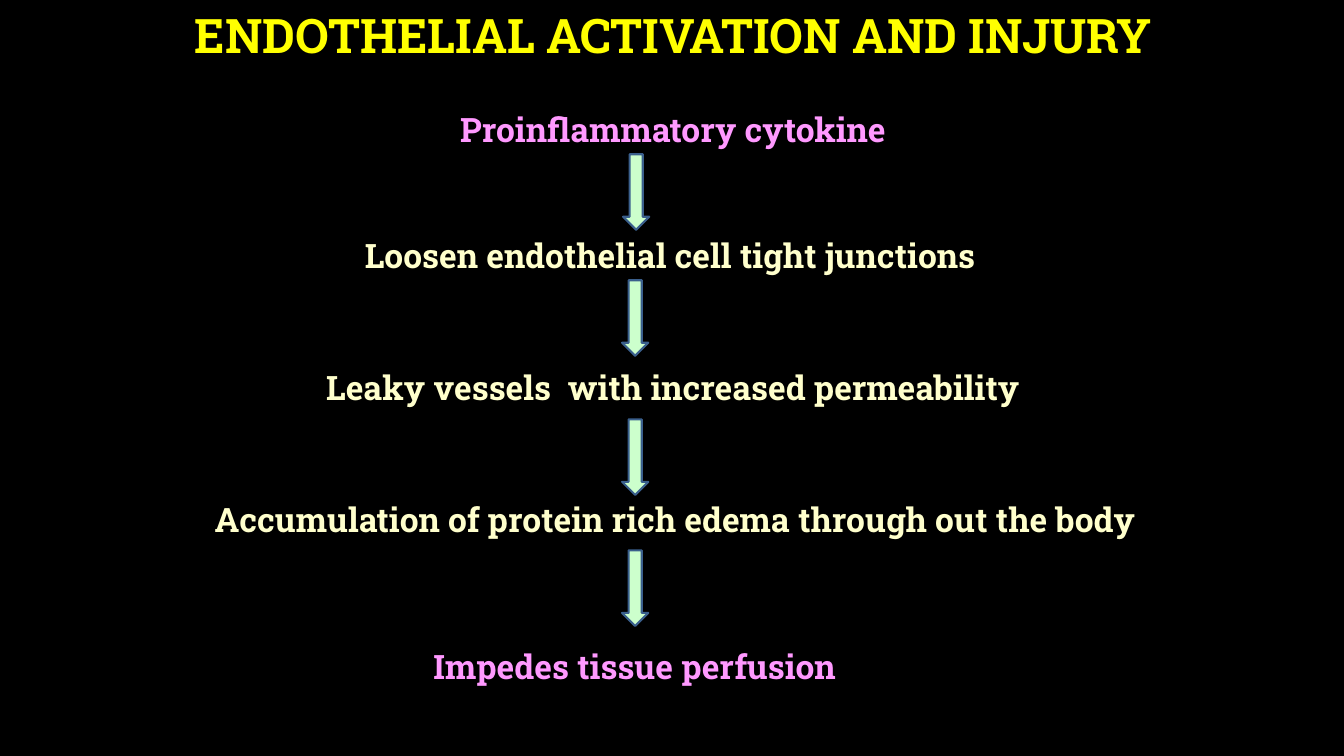
from dataclasses import dataclass

from pptx import Presentation
from pptx.dml.color import RGBColor
from pptx.enum.shapes import MSO_SHAPE
from pptx.enum.text import MSO_ANCHOR, MSO_AUTO_SIZE, PP_ALIGN
from pptx.util import Inches, Pt


@dataclass(frozen=True)
class Theme:
    font: str = "Roboto Slab"
    background: RGBColor = RGBColor(0x00, 0x00, 0x00)
    title: RGBColor = RGBColor(0xFF, 0xFF, 0x00)
    endpoint: RGBColor = RGBColor(0xFF, 0x99, 0xFF)
    step: RGBColor = RGBColor(0xFF, 0xFF, 0xCC)
    arrow: RGBColor = RGBColor(0xCC, 0xFF, 0xCC)
    arrow_line: RGBColor = RGBColor(0x3A, 0x5F, 0x8C)
    title_size: Pt = Pt(34)
    step_size: Pt = Pt(24)


theme = Theme()


def write(tf, text, size, color, align=PP_ALIGN.CENTER):
    """Put one bold line of text in a frame and return its paragraph."""
    tf.word_wrap = True
    p = tf.paragraphs[0]
    p.alignment = align
    r = p.add_run()
    r.text = text
    for name, value in {"name": theme.font, "size": size, "bold": True}.items():
        setattr(r.font, name, value)
    r.font.color.rgb = color
    return p


prs = Presentation()
prs.slide_width, prs.slide_height = Inches(13.33), Inches(7.5)
s = prs.slides.add_slide(prs.slide_layouts[5])
s.background.fill.solid()
s.background.fill.fore_color.rgb = theme.background

title = s.shapes.title
title.left, title.top = Inches(1.02), Inches(0)
title.width, title.height = Inches(11.32), Inches(0.76)
tf = title.text_frame
tf.auto_size = MSO_AUTO_SIZE.NONE
tf.vertical_anchor = MSO_ANCHOR.MIDDLE
p = write(tf, "ENDOTHELIAL ACTIVATION AND INJURY", theme.title_size, theme.title)
p.line_spacing = 0.9

# text, left, top, width, color, alignment
steps = [
    ("Proinflammatory cytokine", 4.29, 1.03, 4.77, theme.endpoint, PP_ALIGN.CENTER),
    ("Loosen endothelial cell tight junctions", 3.52, 2.28, 6.46, theme.step, PP_ALIGN.LEFT),
    ("Leaky vessels  with increased permeability", 2.56, 3.59, 8.23, theme.step, PP_ALIGN.CENTER),
    ("Accumulation of protein rich edema through out the body", 1.31, 4.9, 10.77, theme.step,
     PP_ALIGN.CENTER),
    ("Impedes tissue perfusion", 3.64, 6.36, 5.31, theme.endpoint, PP_ALIGN.CENTER),
]
for text, left, top, width, color, align in steps:
    box = s.shapes.add_textbox(Inches(left), Inches(top), Inches(width), Inches(0.5))
    box.text_frame.auto_size = MSO_AUTO_SIZE.SHAPE_TO_FIT_TEXT
    write(box.text_frame, text, theme.step_size, color, align)

for left, top in [(6.18, 1.53), (6.17, 2.78), (6.17, 4.16), (6.17, 5.46)]:
    arrow = s.shapes.add_shape(
        MSO_SHAPE.DOWN_ARROW, Inches(left), Inches(top), Inches(0.26), Inches(0.75))
    arrow.shadow.inherit = False
    arrow.fill.solid()
    arrow.fill.fore_color.rgb = theme.arrow
    arrow.line.color.rgb = theme.arrow_line
    arrow.line.width = Pt(1.5)

prs.save("out.pptx")
